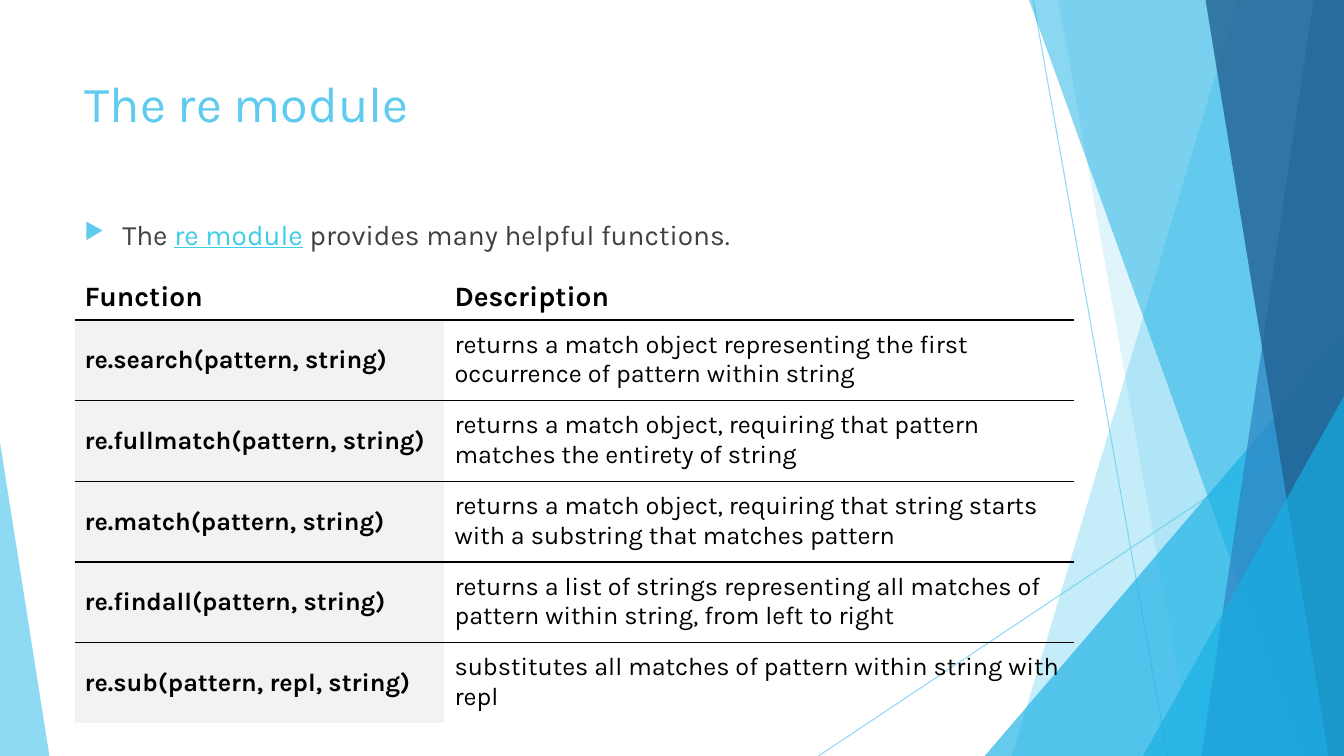
from dataclasses import dataclass
from typing import Optional

from lxml.etree import SubElement
from pptx import Presentation
from pptx.dml.color import RGBColor
from pptx.enum.shapes import MSO_CONNECTOR, MSO_SHAPE
from pptx.enum.text import MSO_ANCHOR
from pptx.oxml import parse_xml
from pptx.oxml.ns import nsdecls, qn
from pptx.util import Pt


@dataclass(frozen=True)
class Theme:
    font: str = "Karla"
    sky: str = "5FCBEF"
    azure: str = "17B0E4"
    blue: str = "2E83C3"
    navy: str = "226292"
    link: str = "3FCDE7"
    body: str = "404040"
    black: str = "000000"
    label_fill: str = "F2F2F2"
    title_size: float = 36
    large_size: float = 20
    cell_size: float = 18


@dataclass(frozen=True)
class Ray:
    start: tuple[float, float]
    end: tuple[float, float]


@dataclass(frozen=True)
class Band:
    """A facet reaching from the slide's top to its bottom and right edges."""
    top_left: float
    bottom_left: float
    color: str
    opacity: int


@dataclass(frozen=True)
class Corner:
    """A triangle standing on the slide's bottom edge."""
    left: float
    top: float
    width: float
    apex: float
    color: str
    opacity: int


THEME = Theme()
WIDTH, HEIGHT = 960, 540
LEFT, TEXT_WIDTH = 53.3, 676.8
COLUMN_WIDTHS = (264.2, 450)
HEADER_HEIGHT, ROW_HEIGHT = 30.6, 56.7
CELL_INSET = 7.2

RAYS = (Ray((738, 0), (834, HEIGHT)), Ray((WIDTH, 290), (584.6, HEIGHT)))
FACETS = (
    Band(884.2, 722.9, THEME.sky, 36),
    Band(756, 851.8, THEME.sky, 20),
    Corner(703.4, 240, 256.6, 1, THEME.azure, 66),
    Band(735.1, 929.5, THEME.azure, 50),
    Band(938.2, 858.2, THEME.blue, 70),
    Band(861.1, 949, THEME.navy, 80),
    Corner(816.5, 283, 143.5, 1, THEME.azure, 66),
    Corner(0, 316, 35.3, 0, THEME.sky, 70),
)
HEADER = ("Function", "Description")
FUNCTIONS = (
    ("re.search(pattern, string)",
     "returns a match object representing the first occurrence of pattern within string"),
    ("re.fullmatch(pattern, string)",
     "returns a match object, requiring that pattern matches the entirety of string"),
    ("re.match(pattern, string)",
     "returns a match object, requiring that string starts with a substring that matches pattern"),
    ("re.findall(pattern, string)",
     "returns a list of strings representing all matches of pattern within string, from left to right"),
    ("re.sub(pattern, repl, string)",
     "substitutes all matches of pattern within string with repl"),
)


def set_opacity(properties, percent: int) -> None:
    color = next(properties.iter(qn("a:srgbClr")))
    SubElement(color, qn("a:alpha"), val=str(percent * 1000))


def style_run(run, size: float, color: str, bold: bool = False) -> None:
    run.font.name = THEME.font
    run.font.size = Pt(size)
    run.font.bold = bold
    run.font.color.rgb = RGBColor.from_string(color)


def draw_ray(slide, ray: Ray) -> None:
    connector = slide.shapes.add_connector(
        MSO_CONNECTOR.STRAIGHT, *map(Pt, ray.start + ray.end))
    connector.line.width = Pt(0.75)
    connector.line.color.rgb = RGBColor.from_string(THEME.sky)
    properties = connector.element.spPr
    set_opacity(properties, 70)
    SubElement(properties, qn("a:effectLst"))


def draw_facet(slide, facet: Band | Corner) -> None:
    if isinstance(facet, Band):
        builder = slide.shapes.build_freeform(Pt(facet.top_left), 0)
        corners = ((WIDTH, 0), (WIDTH, HEIGHT), (facet.bottom_left, HEIGHT))
        builder.add_line_segments([(Pt(x), Pt(y)) for x, y in corners], close=True)
        shape = builder.convert_to_shape()
    else:
        shape = slide.shapes.add_shape(
            MSO_SHAPE.ISOSCELES_TRIANGLE, Pt(facet.left), Pt(facet.top),
            Pt(facet.width), Pt(HEIGHT - facet.top))
        shape.adjustments[0] = facet.apex
    shape.shadow.inherit = False
    shape.line.fill.background()
    shape.fill.solid()
    shape.fill.fore_color.rgb = RGBColor.from_string(facet.color)
    set_opacity(shape.element.spPr, facet.opacity)


def add_paragraph_box(slide, top: float, height: float):
    box = slide.shapes.add_textbox(Pt(LEFT), Pt(top), Pt(TEXT_WIDTH), Pt(height))
    box.text_frame.word_wrap = True
    return box.text_frame.paragraphs[0]


def add_bullet(paragraph) -> None:
    properties = paragraph._p.get_or_add_pPr()
    properties.set("marL", str(Pt(27)))
    properties.set("indent", str(Pt(-27)))
    color = SubElement(properties, qn("a:buClr"))
    SubElement(color, qn("a:srgbClr"), val=THEME.sky)
    SubElement(properties, qn("a:buSzPct"), val="80000")
    SubElement(properties, qn("a:buChar"), char="▶")


def set_borders(cell, top: bool, bottom: bool) -> None:
    properties = cell._tc.get_or_add_tcPr()
    visible = {"lnL": False, "lnR": False, "lnT": top, "lnB": bottom}
    for index, (side, shown) in enumerate(visible.items()):
        fill = (f'<a:solidFill><a:srgbClr val="{THEME.black}"/></a:solidFill>'
                if shown else "<a:noFill/>")
        border = f'<a:{side} {nsdecls("a")} w="{Pt(1)}">{fill}</a:{side}>'
        properties.insert(index, parse_xml(border))


def fill_cell(cell, text: str, size: float, bold: bool, fill: Optional[str]) -> None:
    cell.text_frame.text = text
    style_run(cell.text_frame.paragraphs[0].runs[0], size, THEME.black, bold)
    if fill:
        cell.fill.solid()
        cell.fill.fore_color.rgb = RGBColor.from_string(fill)
    else:
        cell.fill.background()


def draw_table(slide) -> None:
    rows = (HEADER,) + FUNCTIONS
    table = slide.shapes.add_table(
        len(rows), len(HEADER), Pt(LEFT), Pt(197.3), Pt(sum(COLUMN_WIDTHS)),
        Pt(HEADER_HEIGHT + ROW_HEIGHT * len(FUNCTIONS))).table
    table.first_row = table.horz_banding = False
    for column, width in zip(table.columns, COLUMN_WIDTHS):
        column.width = Pt(width)
    for row_index, texts in enumerate(rows):
        is_header = row_index == 0
        table.rows[row_index].height = Pt(HEADER_HEIGHT if is_header else ROW_HEIGHT)
        for column_index, text in enumerate(texts):
            cell = table.cell(row_index, column_index)
            is_label = column_index == 0 and not is_header
            fill_cell(cell, text, THEME.large_size if is_header else THEME.cell_size,
                      is_header or is_label, THEME.label_fill if is_label else None)
            if not is_header:
                cell.margin_top = cell.margin_bottom = Pt(CELL_INSET)
            if is_label:
                cell.vertical_anchor = MSO_ANCHOR.MIDDLE
            set_borders(cell, top=not is_header, bottom=row_index < len(rows) - 1)


def main() -> None:
    presentation = Presentation()
    presentation.slide_width, presentation.slide_height = Pt(WIDTH), Pt(HEIGHT)
    slide = presentation.slides.add_slide(presentation.slide_layouts[6])

    # Faceted background
    for ray in RAYS:
        draw_ray(slide, ray)
    for facet in FACETS:
        draw_facet(slide, facet)

    # Title
    title = add_paragraph_box(slide, 48.2, 103.7)
    title.text = "The re module"
    style_run(title.runs[0], THEME.title_size, THEME.sky)

    # Introduction
    introduction = add_paragraph_box(slide, 151.9, 36)
    introduction.space_before = Pt(10)
    add_bullet(introduction)
    for text, color in (("The ", THEME.body), ("re module", THEME.link),
                        (" provides many helpful functions.", THEME.body)):
        run = introduction.add_run()
        run.text = text
        style_run(run, THEME.large_size, color)
        run.font.underline = color == THEME.link

    # Function reference
    draw_table(slide)
    presentation.save("out.pptx")


if __name__ == "__main__":
    main()
